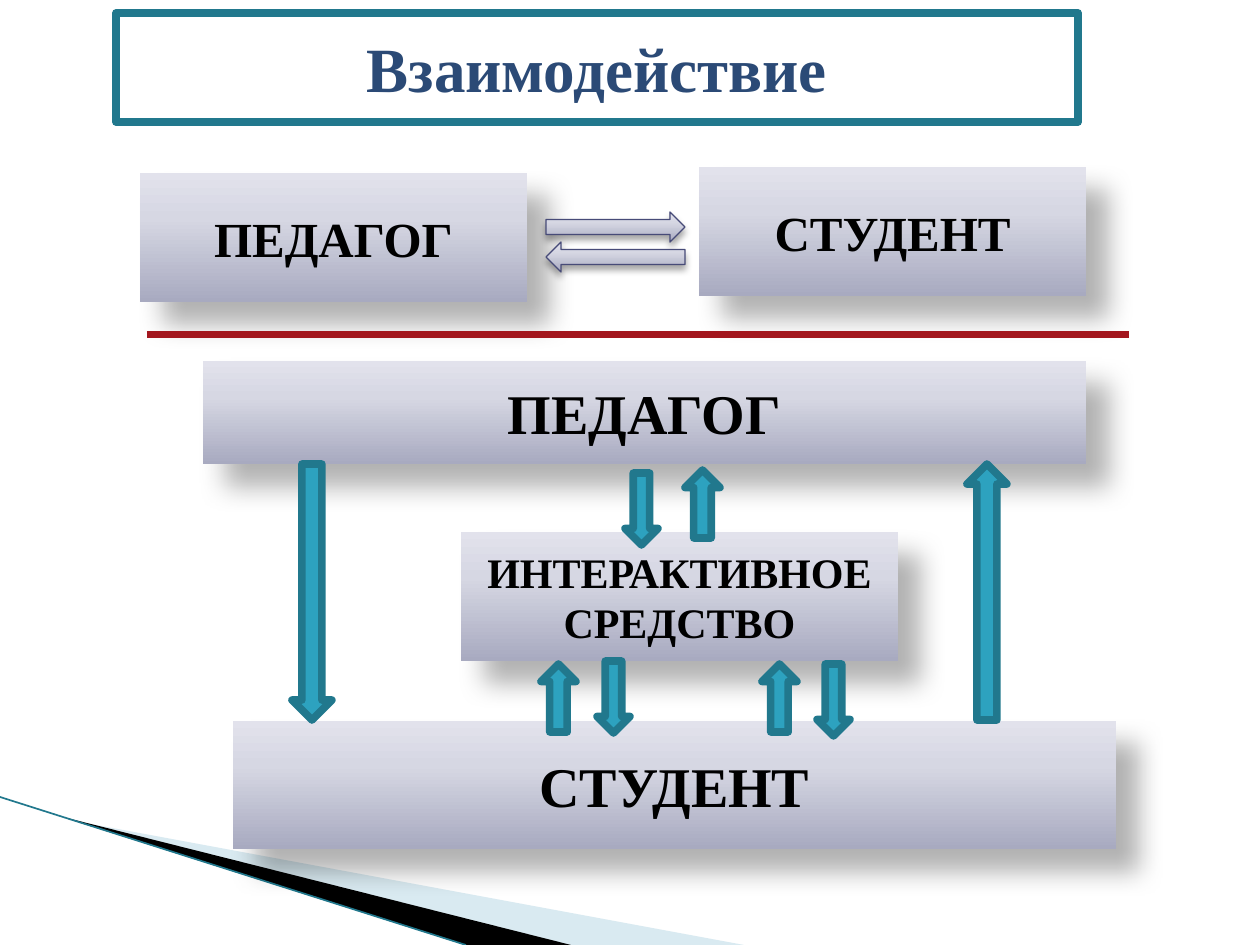
import copy

import pptx
import pptx.dml.color
import pptx.enum.shapes
import pptx.enum.text
import pptx.oxml
import pptx.oxml.ns
import pptx.util

PX = 914400 / 126
SLIDE_SIZE = (1260, 945)
SHAPES = pptx.enum.shapes.MSO_SHAPE

THEME = {
    "font": "Times New Roman",
    "title": "2B4A76", "text": "000000", "white": "FFFFFF",
    "teal": "2DA2BF", "teal_dark": "21788D",
    "divider": "A3171E", "exchange_line": "474B78",
    "wedge_light": "A0CBDC", "wedge_dark": "000000",
    "gradient": [(0, "A8AAC0"), (0.65, "D6D7E3"), (1, "E2E2EC")],
    "title_size": 36, "wide_size": 32, "actor_size": 28, "tool_size": 24,
    "thick": 4.33, "divider_width": 4, "thin": 0.75, "edge_width": 0.95,
}
# opacity %, blur pt, distance pt, direction in degrees
BOX_SHADOW = (30, 15, 18, 45)
EXCHANGE_SHADOW = (35, 4, 3, 90)

# Frames are left, top, width, height in px
TITLE = ("Взаимодействие", (116, 13, 962, 109))
BOXES = [
    ("ПЕДАГОГ", (140, 173, 387, 129), "actor_size"),
    ("СТУДЕНТ", (699, 167, 387, 129), "actor_size"),
    ("ПЕДАГОГ", (203, 361, 883, 103), "wide_size"),
    ("ИНТЕРАКТИВНОЕ СРЕДСТВО", (461, 532, 437, 129), "tool_size"),
    ("СТУДЕНТ", (233, 721, 883, 128), "wide_size"),
]
EXCHANGE_ARROWS = [(SHAPES.RIGHT_ARROW, 212), (SHAPES.LEFT_ARROW, 242)]
EXCHANGE_LEFT, EXCHANGE_SIZE = 546, (139, 30)
# Shape, size, left-top corners
FLOW_ARROWS = [
    (SHAPES.DOWN_ARROW, (40, 256), [(292, 464)]),
    (SHAPES.UP_ARROW, (40, 256), [(967, 464)]),
    (SHAPES.DOWN_ARROW, (33, 72), [(625, 473), (597, 661), (817, 664)]),
    (SHAPES.UP_ARROW, (35, 68), [(685, 470), (541, 664), (762, 664)]),
]
WEDGES = [
    ([(69, 820), (744, 945), (570, 945), (69, 819)], "wedge_light", 40),
    ([(67, 818), (571, 945), (465, 945), (68, 819)], "wedge_dark", 100),
]
EDGE = ((0, 797), (466, 945))
DIVIDER = ((147, 335), (1129, 335))


def px(*values):
    return [pptx.util.Emu(round(value * PX)) for value in values]


def rgb(name):
    return pptx.dml.color.RGBColor.from_string(THEME.get(name, name))


def element(xml):
    """Parse one XML element that uses the drawing prefix a."""
    head, mark, tail = xml.partition(" " if " " in xml.split(">")[0] else ">")
    return pptx.oxml.parse_xml(
        f"{head} {pptx.oxml.ns.nsdecls('a')}{mark}{tail}")


def set_line(shape, color, width):
    shape.line.color.rgb = rgb(color)
    shape.line.width = pptx.util.Pt(width)


def round_corners(shape):
    shape.line._get_or_add_ln().append(element("<a:round></a:round>"))


def fill_solid(shape, color):
    shape.fill.solid()
    shape.fill.fore_color.rgb = rgb(color)


def fill_gradient(shape):
    shape.fill.gradient()
    shape.fill.gradient_angle = 90
    stop_list = shape._element.spPr.find(".//" + pptx.oxml.ns.qn("a:gsLst"))
    stop_list.append(copy.deepcopy(stop_list[0]))
    for stop, (position, color) in zip(shape.fill.gradient_stops,
                                       THEME["gradient"]):
        stop.position = position
        stop.color.rgb = rgb(color)


def add_shadow(shape, opacity, blur, distance, direction):
    shape._element.spPr.append(element(
        f'<a:effectLst><a:outerShdw blurRad="{blur * 12700}" '
        f'dist="{distance * 12700}" dir="{direction * 60000}" algn="tl" '
        f'rotWithShape="0"><a:srgbClr val="000000">'
        f'<a:alpha val="{opacity * 1000}"/></a:srgbClr>'
        f'</a:outerShdw></a:effectLst>'))


def write_text(shape, text, size, color):
    frame = shape.text_frame
    frame.text = text
    frame_format = {"word_wrap": True,
                    "auto_size": pptx.enum.text.MSO_AUTO_SIZE.NONE,
                    "vertical_anchor": pptx.enum.text.MSO_ANCHOR.MIDDLE}
    for name, value in frame_format.items():
        setattr(frame, name, value)
    para = frame.paragraphs[0]
    para.alignment = pptx.enum.text.PP_ALIGN.CENTER
    span = para.runs[0]
    font_format = {"name": THEME["font"], "bold": True,
                   "size": pptx.util.Pt(THEME[size])}
    for name, value in font_format.items():
        setattr(span.font, name, value)
    span.font.color.rgb = rgb(color)


def add_line(page, ends, color, width):
    (x1, y1), (x2, y2) = ends
    line = page.shapes.add_connector(
        pptx.enum.shapes.MSO_CONNECTOR.STRAIGHT, *px(x1, y1, x2, y2))
    set_line(line, color, width)
    line._element.spPr.append(element("<a:effectLst></a:effectLst>"))


def add_wedge(page, points, color, opacity):
    builder = page.shapes.build_freeform(*points[0], scale=PX)
    builder.add_line_segments(points[1:], close=True)
    wedge = builder.convert_to_shape()
    wedge.shadow.inherit = False
    fill_solid(wedge, color)
    wedge.line.fill.background()
    if opacity < 100:
        paint = wedge._element.spPr.find(
            pptx.oxml.ns.qn("a:solidFill"))[0]
        paint.append(element(f'<a:alpha val="{opacity * 1000}"></a:alpha>'))


def add_title(page, text, frame):
    title = page.shapes.title
    title.left, title.top, title.width, title.height = px(*frame)
    fill_solid(title, "white")
    set_line(title, "teal_dark", THEME["thick"])
    round_corners(title)
    write_text(title, text, "title_size", "title")


def main():
    deck = pptx.Presentation()
    deck.slide_width, deck.slide_height = px(*SLIDE_SIZE)
    page = deck.slides.add_slide(deck.slide_layouts[5])
    add_title(page, *TITLE)

    for points, color, opacity in WEDGES:
        add_wedge(page, points, color, opacity)
    add_line(page, EDGE, "teal_dark", THEME["edge_width"])

    for text, frame, size in BOXES:
        box = page.shapes.add_shape(SHAPES.RECTANGLE, *px(*frame))
        fill_gradient(box)
        box.line.fill.background()
        add_shadow(box, *BOX_SHADOW)
        write_text(box, text, size, "text")

    for kind, top in EXCHANGE_ARROWS:
        arrow = page.shapes.add_shape(
            kind, *px(EXCHANGE_LEFT, top, *EXCHANGE_SIZE))
        fill_gradient(arrow)
        set_line(arrow, "exchange_line", THEME["thin"])
        add_shadow(arrow, *EXCHANGE_SHADOW)

    add_line(page, DIVIDER, "divider", THEME["divider_width"])

    for kind, size, corners in FLOW_ARROWS:
        for corner in corners:
            arrow = page.shapes.add_shape(kind, *px(*corner, *size))
            arrow.shadow.inherit = False
            fill_solid(arrow, "teal")
            set_line(arrow, "teal_dark", THEME["thick"])
            round_corners(arrow)

    deck.save("out.pptx")


if __name__ == "__main__":
    main()
